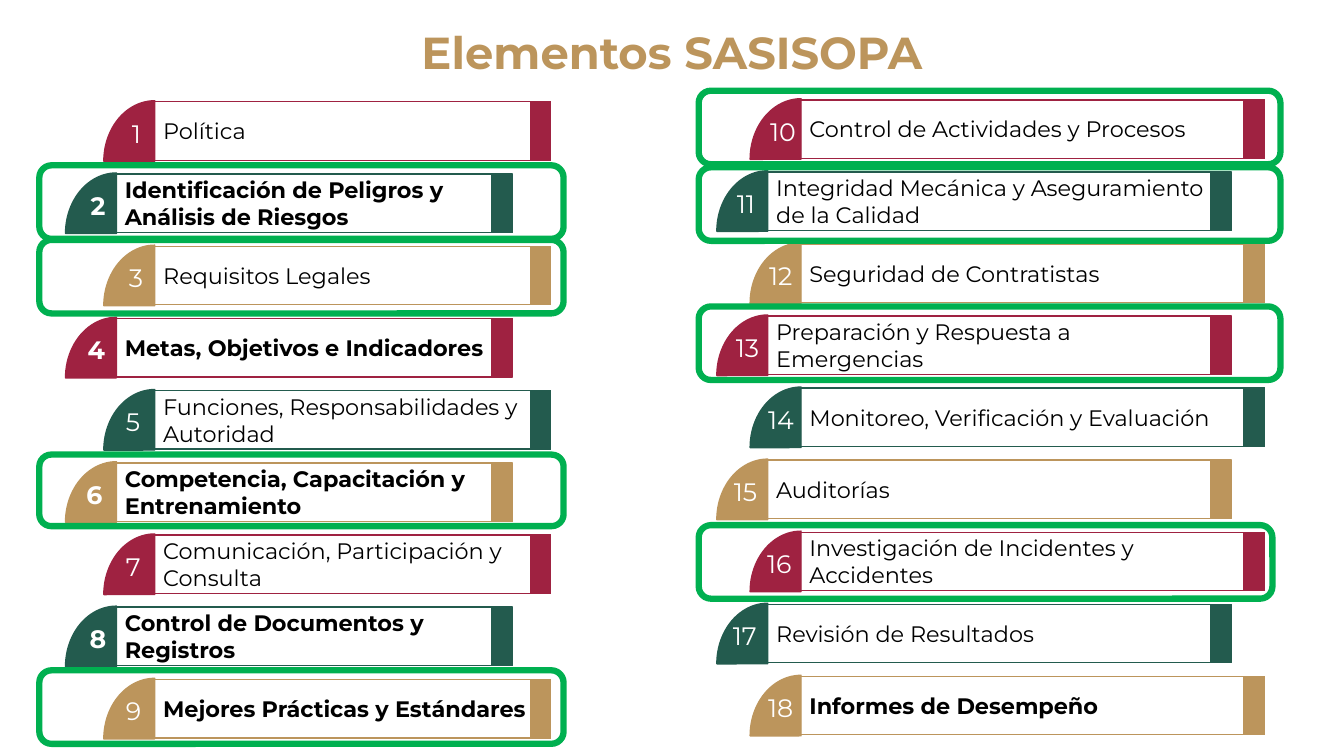
from pptx import Presentation
from pptx.dml.color import RGBColor
from pptx.enum.shapes import MSO_SHAPE
from pptx.enum.text import MSO_ANCHOR, PP_ALIGN
from pptx.util import Inches, Pt

RECT = MSO_SHAPE.RECTANGLE
ROUND = MSO_SHAPE.ROUNDED_RECTANGLE
PIE = MSO_SHAPE.PIE
MIDDLE = MSO_ANCHOR.MIDDLE
TOP = MSO_ANCHOR.TOP
LEFT = PP_ALIGN.LEFT
CENTER = PP_ALIGN.CENTER

RED, GREEN, GOLD = "9F2241", "235B4E", "BC955C"
BLACK, WHITE, FRAME = "000000", "FFFFFF", "00B050"
TONES = (RED, GREEN, GOLD)
ROW_H, CAP_W = 0.58, 0.2

FIRST = [
    ("Política", 1.21, False, False),
    ("Identificación de Peligros y Análisis de Riesgos", 0.8, True, True),
    ("Requisitos Legales", 1.18, False, False),
    ("Metas, Objetivos e Indicadores", 0.77, True, True),
    ("Funciones, Responsabilidades y Autoridad", 1.15, False, False),
    ("Competencia, Capacitación y Entrenamiento", 0.76, True, True),
    ("Comunicación, Participación y Consulta", 1.15, False, False),
    ("Control de Documentos y Registros", 0.79, True, True),
    ("Mejores Prácticas y Estándares", 1.15, True, False),
]
SECOND = [
    ("Control de Actividades y Procesos", 7.54, False, False),
    ("Integridad Mecánica y Aseguramiento de la Calidad", 7.21, False, False),
    ("Seguridad de Contratistas", 7.53, False, False),
    ("Preparación y Respuesta a Emergencias", 7.2, False, False),
    ("Monitoreo, Verificación y Evaluación", 7.52, False, False),
    ("Auditorías", 7.18, False, False),
    ("Investigación de Incidentes y Accidentes", 7.51, False, False),
    ("Revisión de Resultados", 7.17, False, False),
    ("Informes de Desempeño", 7.52, True, False),
]
COLUMNS = [
    (FIRST, 1, 1.01, 6.74, (1.52, 1.14), 3.94, 0.24),
    (SECOND, 10, 0.99, 6.71, (7.93, 7.6), 4.61, 0.6),
]
FRAMES = [
    (0.39, 1.64, 5.2, 0.73), (0.39, 2.38, 5.2, 0.73),
    (0.39, 4.51, 5.2, 0.71), (0.39, 6.65, 5.2, 0.73),
    (6.93, 0.9, 5.77, 0.73), (6.93, 1.66, 5.77, 0.73),
    (6.93, 3.04, 5.77, 0.73), (6.93, 5.21, 5.69, 0.73),
]


def paint(code):
    return RGBColor.from_string(code)


class Board:
    font = "Montserrat"

    def __init__(self, slide):
        self.slide = slide

    def text(self, shape, text, size, tone, bold=False, align=LEFT,
             anchor=MIDDLE, wrap=True):
        frame = shape.text_frame
        frame.word_wrap = wrap
        frame.vertical_anchor = anchor
        para = frame.paragraphs[0]
        para.alignment = align
        run = para.add_run()
        run.text = text
        run.font.name = self.font
        run.font.size = Pt(size)
        run.font.bold = bold
        run.font.color.rgb = paint(tone)

    def title(self, text, x, y, w, h):
        shape = self.slide.shapes.title
        shape.left, shape.top = Inches(x), Inches(y)
        shape.width, shape.height = Inches(w), Inches(h)
        self.text(shape, text, 32, GOLD, True, CENTER, wrap=False)

    def shape(self, kind, x, y, w, h, line, fill=None, weight=1):
        shape = self.slide.shapes.add_shape(
            kind, Inches(x), Inches(y), Inches(w), Inches(h))
        shape.shadow.inherit = False
        shape.line.color.rgb = paint(line)
        shape.line.width = Pt(weight)
        if fill:
            shape.fill.solid()
            shape.fill.fore_color.rgb = paint(fill)
        else:
            shape.fill.background()
        return shape

    def label(self, text, x, y, w, tone, bold):
        bar = self.shape(RECT, x, y, w, ROW_H, tone)
        self.text(bar, text, 16, BLACK, bold)
        self.shape(RECT, x + w - CAP_W, y, CAP_W, ROW_H, tone, tone)
        fan = self.shape(PIE, x - 0.49, y - 0.01, 1.01, 1.2, tone, tone)
        fan.adjustments[0] = 107.918
        fan.adjustments[1] = 162

    def number(self, text, x, y, w, bold):
        box = self.slide.shapes.add_textbox(
            Inches(x), Inches(y), Inches(w), Inches(0.4))
        self.text(box, text, 18, WHITE, bold, anchor=TOP)

    def column(self, rows, start, top, last, edges, w, num_w):
        step = (last - top) / (len(rows) - 1)
        for i, (text, num_x, bold, num_bold) in enumerate(rows):
            y = top + i * step
            self.label(text, edges[i % 2], y, w, TONES[i % 3], bold)
            self.number(str(start + i), num_x, y + 0.11, num_w, num_bold)


def main():
    deck = Presentation()
    deck.slide_width, deck.slide_height = Inches(13.33), Inches(7.5)
    board = Board(deck.slides.add_slide(deck.slide_layouts[5]))
    board.title("Elementos SASISOPA", 4.04, 0.21, 5.25, 0.6)
    for column in COLUMNS:
        board.column(*column)
    for frame in FRAMES:
        board.shape(ROUND, *frame, FRAME, weight=4.5)
    deck.save("out.pptx")


if __name__ == "__main__":
    main()
